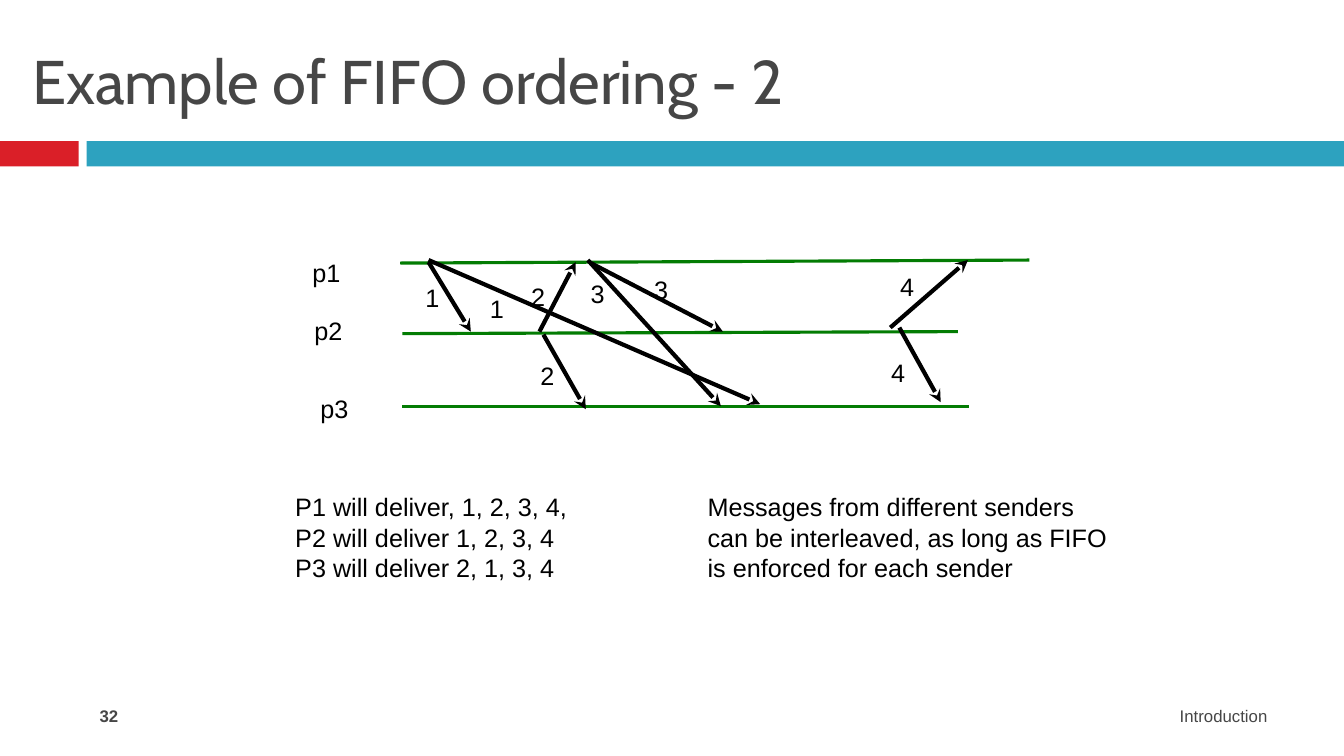
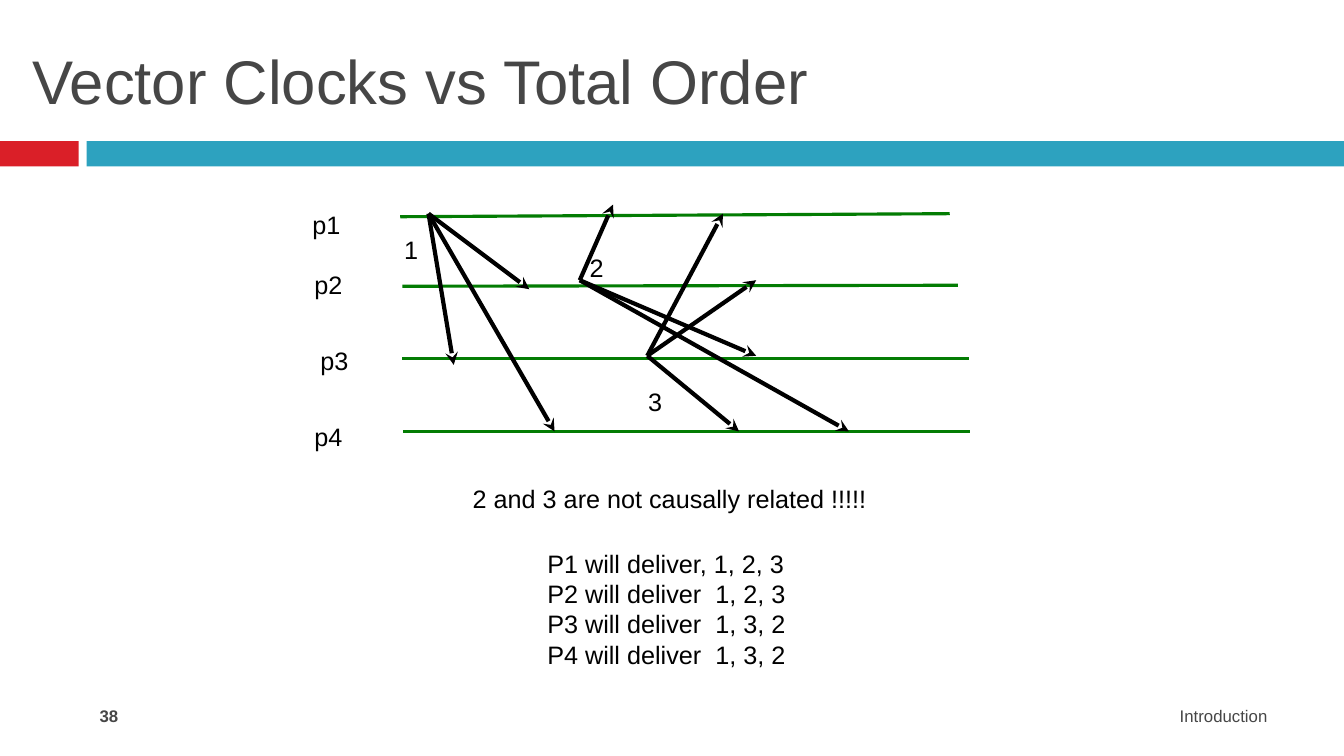
from lxml.etree import SubElement
from pptx import Presentation
from pptx.dml.color import RGBColor
from pptx.enum.shapes import MSO_CONNECTOR, MSO_SHAPE
from pptx.enum.text import MSO_ANCHOR, PP_ALIGN
from pptx.oxml.ns import qn
from pptx.util import Inches, Pt

RED = RGBColor(0xDA, 0x1F, 0x28)
BLUE = RGBColor(0x2D, 0xA2, 0xBF)
GREEN = RGBColor(0x03, 0x7C, 0x03)
GRAY = RGBColor(0x46, 0x46, 0x46)
BLACK = RGBColor(0, 0, 0)

WIDTH, HEIGHT = 13.33, 7.5
BAND_TOP, BAND_HEIGHT = 1.4, 0.25
BANDS = [(0, 0.78, RED), (0.86, WIDTH - 0.86, BLUE)]
LINE_HEIGHT, PADDING = 0.3, 0.1
FOOTER_TOP = 6.95

# Processes: name, label corner, line start, line end
# Messages: start point, then the points where it arrives
# Labels: number, left, top; notes: left, top, width, lines
SLIDES = [
    {
        "title": "Example of FIFO ordering - 2",
        "title_font": "Cabin",
        "number": "32",
        "processes": [
            ("p1", (3, 2.5), (3.97, 2.61), (10.21, 2.58)),
            ("p2", (3.02, 3.08), (3.99, 3.31), (9.5, 3.29)),
            ("p3", (3.08, 3.85), (3.99, 4.03), (9.61, 4.03)),
        ],
        "messages": [
            ((4.25, 2.6), [(4.67, 3.29)]),
            ((4.25, 2.58), [(7.54, 4.01)]),
            ((5.83, 2.58), [(7.15, 4.03)]),
            ((5.86, 2.61), [(7.17, 3.29)]),
            ((5.35, 3.29), [(5.71, 2.6)]),
            ((5.39, 3.32), [(5.81, 4.06)]),
            ((8.83, 3.25), [(9.6, 2.58)]),
            ((8.92, 3.25), [(9.33, 3.99)]),
        ],
        "labels": [
            ("1", 4.12, 2.75), ("1", 4.76, 2.86),
            ("2", 5.17, 2.74), ("2", 5.26, 3.53),
            ("3", 5.76, 2.71), ("3", 6.39, 2.67),
            ("4", 8.83, 2.64), ("4", 8.74, 3.5),
        ],
        "notes": [
            (2.83, 4.83, 3.2, ["P1 will deliver, 1, 2, 3, 4,",
                               "P2 will deliver 1, 2, 3, 4",
                               "P3 will deliver 2, 1, 3, 4"]),
            (6.92, 4.83, 4.5, ["Messages from different senders",
                               "can be interleaved, as long as FIFO",
                               "is enforced for each sender"]),
        ],
    },
    {
        "title": "Vector Clocks vs Total Order",
        "title_font": "Arial",
        "number": "38",
        "processes": [
            ("p1", (3, 2.03), (3.97, 2.15), (9.42, 2.12)),
            ("p2", (3.02, 2.62), (3.99, 2.84), (9.5, 2.83)),
            ("p3", (3.08, 3.38), (3.99, 3.56), (9.61, 3.56)),
            ("p4", (3.02, 4.13), (4, 4.28), (9.62, 4.28)),
        ],
        "messages": [
            ((4.25, 2.12), [(4.5, 3.62), (5.5, 4.28), (5.25, 2.87)]),
            ((5.75, 2.78), [(7.5, 3.53), (6.08, 2.03), (8.42, 4.28)]),
            ((6.42, 3.53), [(7.17, 2.12), (7.5, 2.78), (7.33, 4.28)]),
        ],
        "labels": [("1", 3.91, 2.28), ("2", 5.75, 2.45), ("3", 6.33, 3.78)],
        "notes": [
            (4.59, 4.75, 4.4, ["2 and 3 are not causally related !!!!!"]),
            (5.33, 5.39, 3, ["P1 will deliver, 1, 2, 3",
                             "P2 will deliver  1, 2, 3",
                             "P3 will deliver  1, 3, 2",
                             "P4 will deliver  1, 3, 2"]),
        ],
    },
]


def add_text(page, lines, left, top, width, height=None, size=18, color=BLACK,
             name="Arial", bold=False, align=PP_ALIGN.LEFT, anchor=MSO_ANCHOR.TOP):
    height = height or len(lines) * LINE_HEIGHT + PADDING
    box = page.shapes.add_textbox(Inches(left), Inches(top), Inches(width), Inches(height))
    frame = box.text_frame
    frame.word_wrap = True
    frame.vertical_anchor = anchor
    frame.text = "\n".join(lines)
    for para in frame.paragraphs:
        para.alignment = align
        para.font.size = Pt(size)
        para.font.name = name
        para.font.bold = bold
        para.font.color.rgb = color


def add_line(page, start, end, color, weight, arrow=False):
    line = page.shapes.add_connector(
        MSO_CONNECTOR.STRAIGHT, *[Inches(value) for value in (*start, *end)])
    line.line.color.rgb = color
    line.line.width = Pt(weight)
    if arrow:
        SubElement(line.line._get_or_add_ln(), qn("a:tailEnd"), type="stealth")
    SubElement(line._element.spPr, qn("a:effectLst"))


def add_frame(page, title, title_font, number):
    """Bands, title and footer shared by all slides."""
    for left, width, color in BANDS:
        band = page.shapes.add_shape(MSO_SHAPE.RECTANGLE, Inches(left), Inches(BAND_TOP),
                                     Inches(width), Inches(BAND_HEIGHT))
        band.shadow.inherit = False
        band.fill.solid()
        band.fill.fore_color.rgb = color
        band.line.fill.background()
    add_text(page, [title], 0.22, 0.25, 12.89, 1.08, size=44, color=GRAY,
             name=title_font, anchor=MSO_ANCHOR.MIDDLE)
    add_text(page, ["Introduction"], 7.56, FOOTER_TOP, 5.11, size=12, color=GRAY,
             align=PP_ALIGN.RIGHT)
    add_text(page, [number], 0.89, FOOTER_TOP, 2.89, size=12, color=GRAY, bold=True)


def add_diagram(page, processes, messages, labels):
    for name, corner, start, end in processes:
        add_line(page, start, end, GREEN, 2.25)
        add_text(page, [name], *corner, 0.73)
    for start, arrivals in messages:
        for end in arrivals:
            add_line(page, start, end, BLACK, 3, arrow=True)
    for label, left, top in labels:
        add_text(page, [label], left, top, 0.35)


def main():
    deck = Presentation()
    deck.slide_width, deck.slide_height = Inches(WIDTH), Inches(HEIGHT)
    for content in SLIDES:
        page = deck.slides.add_slide(deck.slide_layouts[6])
        add_frame(page, content["title"], content["title_font"], content["number"])
        add_diagram(page, content["processes"], content["messages"], content["labels"])
        for left, top, width, lines in content["notes"]:
            add_text(page, lines, left, top, width)
    deck.save("out.pptx")


if __name__ == "__main__":
    main()
